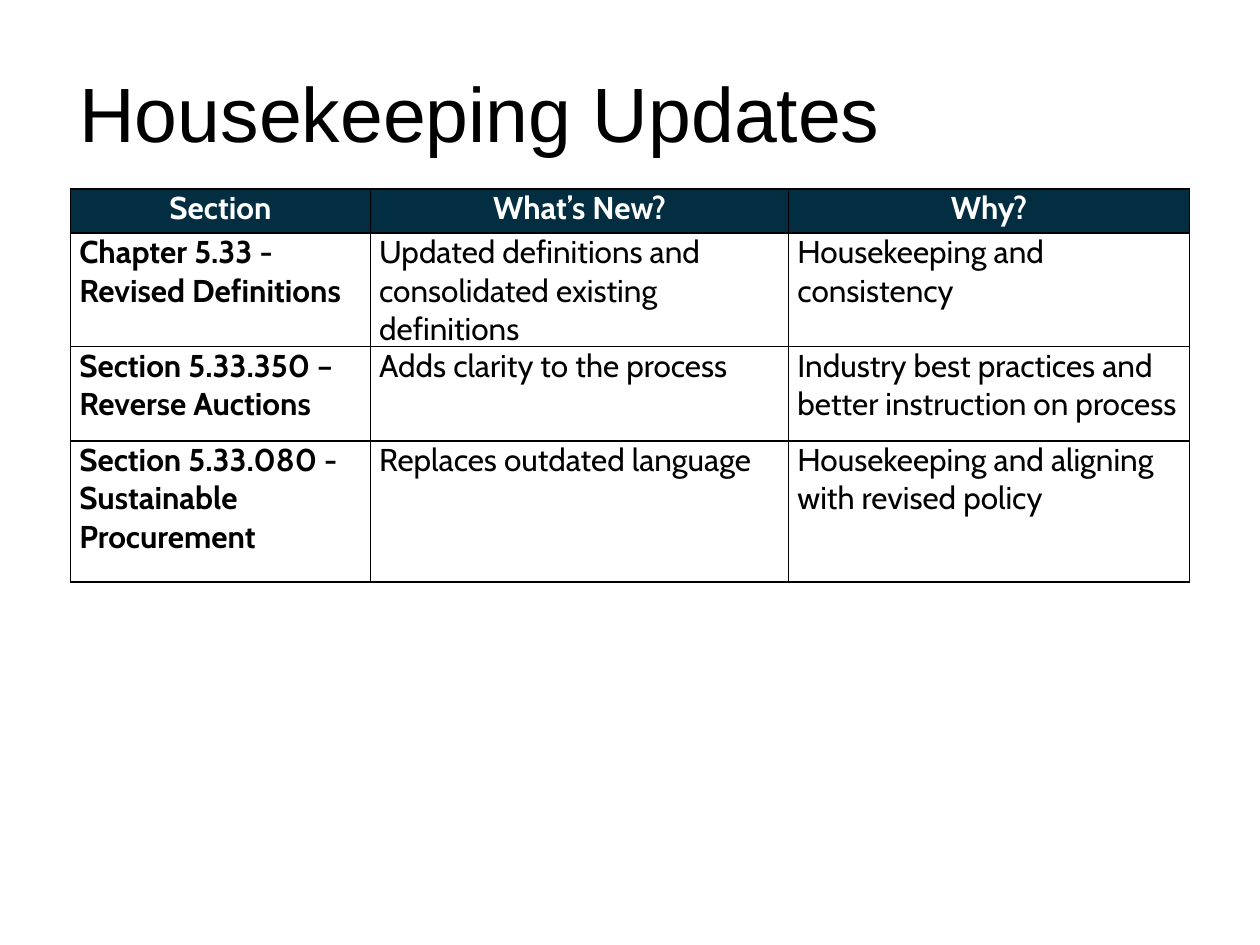
"""Build the Housekeeping Updates slide with its table of code changes."""
from lxml.etree import SubElement
from pptx import Presentation
from pptx.dml.color import RGBColor
from pptx.enum.text import MSO_ANCHOR as Anchor, PP_ALIGN as Align
from pptx.oxml.ns import qn
from pptx.util import Inches, Pt


def add_span(para, text, font, size, color, bold=False):
    span = para.add_run()
    span.text = text
    span.font.name = font
    span.font.size = Pt(size)
    span.font.bold = bold
    span.font.color.rgb = RGBColor.from_string(color)


def add_borders(cell, color):
    props = cell._tc.get_or_add_tcPr()
    for side in ("a:lnL", "a:lnR", "a:lnT", "a:lnB"):
        line = SubElement(props, qn(side), w=str(Pt(1)))
        fill = SubElement(line, qn("a:solidFill"))
        SubElement(fill, qn("a:srgbClr"), val=color)


BLACK, WHITE, NAVY = "000000", "FFFFFF", "032E41"
COLUMN_WIDTHS = [2.38, 3.32, 3.18]
ROW_HEIGHTS = [0.35, 0.75, 0.75, 1.12]
ROWS = [
    ("Section", "What’s New?", "Why?"),
    ("Chapter 5.33 - Revised Definitions",
     "Updated definitions and consolidated existing definitions",
     "Housekeeping and consistency"),
    ("Section 5.33.350 – Reverse Auctions",
     "Adds clarity to the process",
     "Industry best practices and better instruction on process"),
    ("Section 5.33.080 - Sustainable Procurement",
     "Replaces outdated language",
     "Housekeeping and aligning with revised policy"),
]

deck = Presentation()
deck.slide_width, deck.slide_height = Inches(10), Inches(7.5)
page = deck.slides.add_slide(deck.slide_layouts[6])

title = page.shapes.add_textbox(Inches(0.56), Inches(0.51), Inches(8.29), Inches(1.09))
frame = title.text_frame
frame.word_wrap = True
frame.vertical_anchor = Anchor.TOP
frame.margin_left = frame.margin_right = Inches(0.07)
frame.margin_top = Inches(0.1)
frame.paragraphs[0].line_spacing = 0.89
add_span(frame.paragraphs[0], "Housekeeping Updates", "Arial", 44, BLACK)

table = page.shapes.add_table(
    len(ROWS), len(COLUMN_WIDTHS), Inches(0.56), Inches(1.5),
    Inches(sum(COLUMN_WIDTHS)), Inches(sum(ROW_HEIGHTS))).table
table.horz_banding = False
for column, width in zip(table.columns, COLUMN_WIDTHS):
    column.width = Inches(width)

for row_index, (texts, height) in enumerate(zip(ROWS, ROW_HEIGHTS)):
    table.rows[row_index].height = Inches(height)
    header = row_index == 0
    for column_index, text in enumerate(texts):
        cell = table.cell(row_index, column_index)
        cell.margin_left = cell.margin_right = Inches(0.07)
        cell.margin_top = cell.margin_bottom = 0
        add_borders(cell, BLACK)
        if header:
            cell.fill.solid()
            cell.fill.fore_color.rgb = RGBColor.from_string(NAVY)
        else:
            cell.fill.background()
        para = cell.text_frame.paragraphs[0]
        para.alignment = Align.CENTER if header else Align.LEFT
        add_span(para, text, "Cabin", 18, WHITE if header else BLACK,
                 bold=header or column_index == 0)

deck.save("out.pptx")
